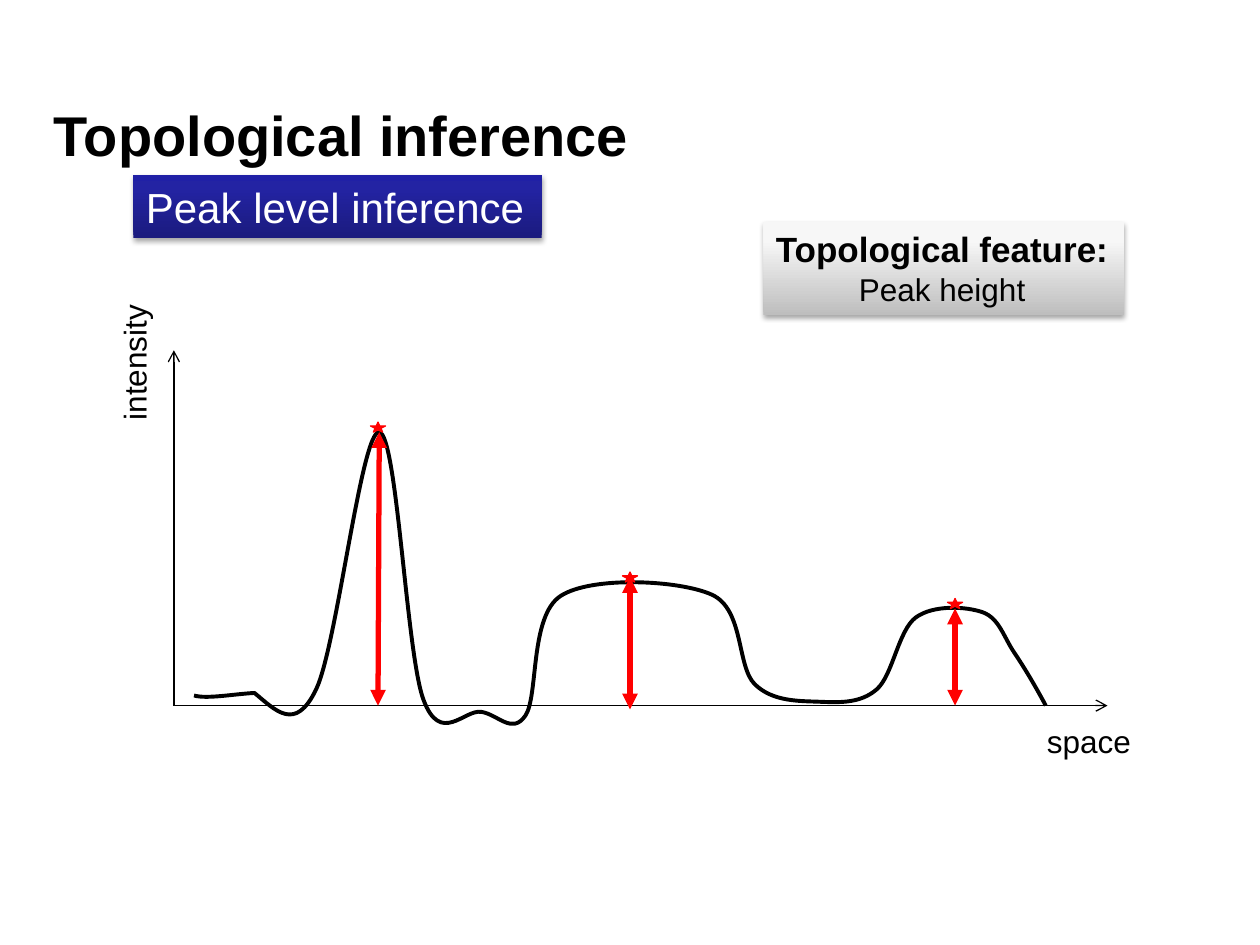
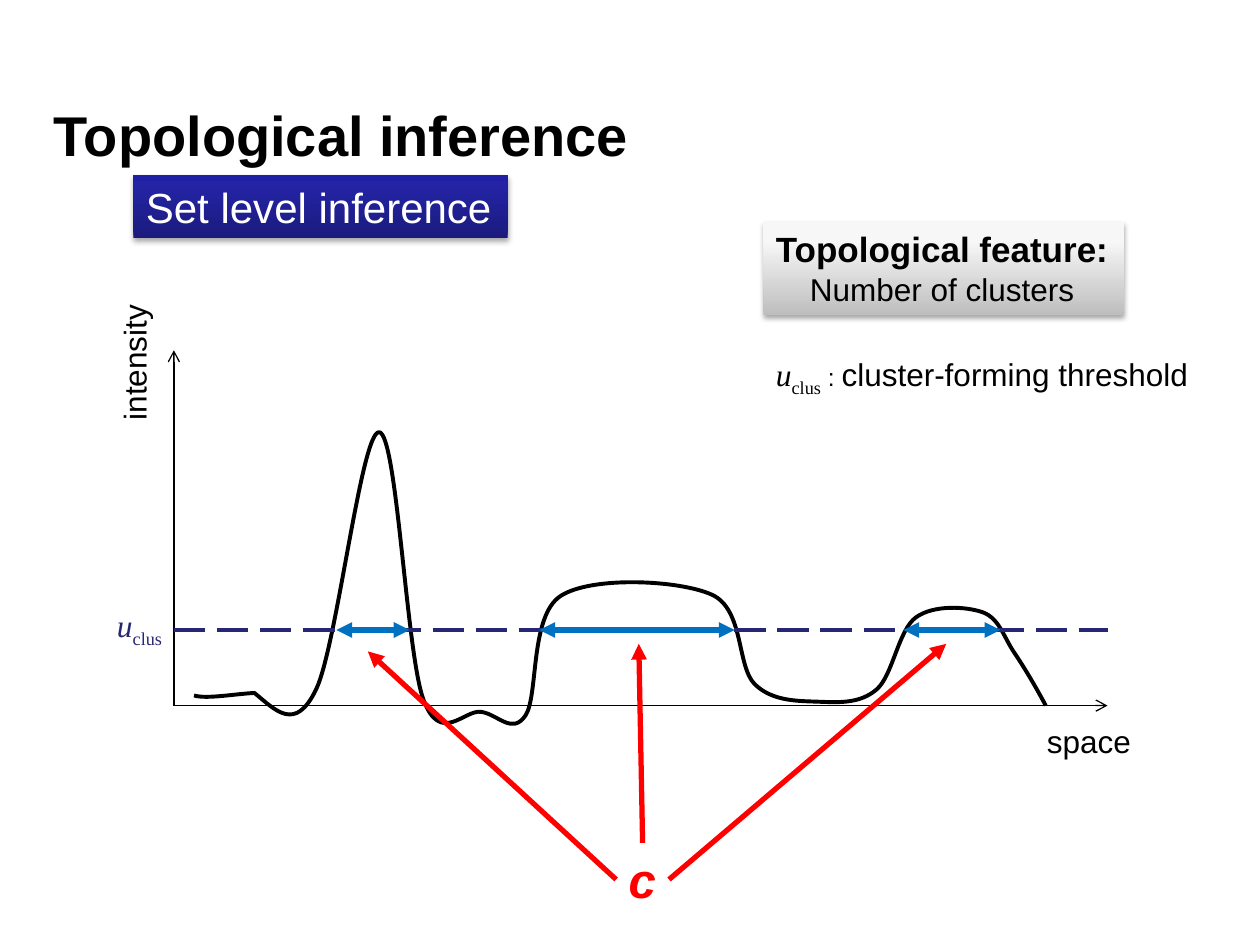
from copy import deepcopy
from dataclasses import dataclass
from typing import Any

from lxml.etree import SubElement
from pptx import Presentation
from pptx.dml.color import RGBColor
from pptx.enum.dml import MSO_LINE
from pptx.enum.shapes import MSO_CONNECTOR, MSO_SHAPE
from pptx.enum.text import MSO_ANCHOR, MSO_AUTO_SIZE, PP_ALIGN
from pptx.oxml.ns import qn
from pptx.util import Inches, Pt

BLACK, WHITE, RED = "000000", "FFFFFF", "FF0000"
NAVY, BLUE = "262673", "0070C0"
BANNER_SHADES = ("1B1B7E", "2323A3", "2020A6")
FEATURE_SHADES = ("BEBEBE", "F7F7F7", "F8F8F8")
SANS, SERIF = "Arial", "Times New Roman"

THRESHOLD = 0.6
AXIS_WIDTH, AXIS_HEIGHT = 7.41, 2.82
SIGNAL_HEIGHT = 2.31
BASELINE_START = [(0.04, 0.28), (0.16, 0.08), (0.64, 0.10), (1.13, 0.13)]
SIGNAL = [
    (0.11, 0.97), (0.64, 0.10), (1.13, 0.13), (1.63, 2.17), (1.98, 0.05),
    (2.44, -0.05), (2.79, -0.08), (3.07, 0.87), (4.27, 0.88), (4.61, 0.17),
    (5.13, 0.03), (5.58, 0.13), (5.89, 0.70), (6.42, 0.74), (6.67, 0.42),
    (6.92, 0), (7.15, -0.48),
]
PEAK_ARROWS = [
    ((1.63, 2.17), (1.62, 0)),
    ((3.62, 1.02), (3.62, -0.03)),
    ((6.2, 0.77), (6.2, 0)),
]
PEAK_STARS = [(1.62, 2.21), (3.62, 1.02), (6.2, 0.81)]
CLUSTERS = [(1.29, 1.87), (2.9, 4.45), (5.79, 6.56)]
COUNT_ARROWS = [
    ((3.72, -1.09), (3.69, 0.49)),
    ((3.51, -1.38), (1.54, 0.43)),
    ((3.93, -1.38), (6.13, 0.49)),
]


@dataclass
class Plot:
    """A shape collection and the place of the plot origin, with y going up."""
    shapes: Any
    left: float = 1.38
    base: float = 5.6

    def place(self, x, y):
        """Turn a plot point into slide inches."""
        return self.left + x, self.base - y


def rgb(value):
    """Turn a hex string into a colour."""
    return RGBColor.from_string(value)


def style(font, size, color, name=SANS, bold=False, italic=False):
    """Set all the features of a font."""
    font.size, font.name = Pt(size), name
    font.bold, font.italic = bold, italic
    font.color.rgb = rgb(color)


def add_text(shapes, at, text, size, color=BLACK, wrap=False, **look):
    """Add a text box with one styled paragraph."""
    box = shapes.add_textbox(*map(Inches, at))
    frame = box.text_frame
    frame.word_wrap = wrap
    frame.auto_size = MSO_AUTO_SIZE.NONE if wrap else MSO_AUTO_SIZE.SHAPE_TO_FIT_TEXT
    para = frame.paragraphs[0]
    para.text = text
    style(para.font, size, color, **look)
    return box


def add_panel(shapes, at, shades):
    """Add a shadowed rectangle shaded from bottom to top."""
    panel = shapes.add_shape(MSO_SHAPE.RECTANGLE, *map(Inches, at))
    panel.line.fill.background()
    panel.fill.gradient()
    panel.fill.gradient_angle = 90
    stops = panel._element.spPr.find(".//" + qn("a:gsLst"))
    stops.append(deepcopy(stops[-1]))
    for stop, position, shade in zip(panel.fill.gradient_stops, (0, 0.8, 1), shades):
        stop.position = position
        stop.color.rgb = rgb(shade)
    panel.shadow.inherit = False
    effects = panel._element.spPr.find(qn("a:effectLst"))
    shadow = SubElement(effects, qn("a:outerShdw"), blurRad=str(Pt(3.1)),
                        dist=str(Pt(1.8)), dir="5400000", rotWithShape="0")
    tint = SubElement(shadow, qn("a:srgbClr"), val=BLACK)
    SubElement(tint, qn("a:alpha"), val="35000")
    panel.text_frame.vertical_anchor = MSO_ANCHOR.TOP
    return panel


def add_line(plot, start, end, color, width, head=None, tail=None, dash=None):
    """Connect two plot points, with optional arrowheads."""
    ends = [Inches(length) for point in (start, end) for length in plot.place(*point)]
    line = plot.shapes.add_connector(MSO_CONNECTOR.STRAIGHT, *ends)
    line.line.color.rgb = rgb(color)
    line.line.width = Pt(width)
    if dash:
        line.line.dash_style = dash
    outline = line.line._get_or_add_ln()
    for tag, kind in (("a:headEnd", head), ("a:tailEnd", tail)):
        if kind:
            SubElement(outline, qn(tag), type=kind)
    SubElement(line._element.spPr, qn("a:effectLst"))


def bezier_segments(knots):
    """Give two controls and an end for each stretch between the outer guides."""
    return [
        (tuple(q + (r - p) / 6 for p, q, r in zip(a, b, c)),
         tuple(r - (s - q) / 6 for q, r, s in zip(b, c, d)), c)
        for a, b, c, d in zip(knots, knots[1:], knots[2:], knots[3:])
    ]


def draw_signal(plot):
    """Draw the intensity curve with one Bézier stretch between knots."""
    segments = [
        [tuple(map(Inches, plot.place(*point))) for point in segment]
        for segment in bezier_segments(BASELINE_START) + bezier_segments(SIGNAL)
    ]
    start = map(Inches, plot.place(*BASELINE_START[1]))
    builder = plot.shapes.build_freeform(*start)
    builder.add_line_segments([segment[-1] for segment in segments], close=False)
    curve = builder.convert_to_shape()
    outline = curve._element.spPr.find(".//" + qn("a:path"))
    for straight, segment in zip(outline.findall(qn("a:lnTo")), segments):
        outline.remove(straight)
        bend = SubElement(outline, qn("a:cubicBezTo"))
        for x, y in segment:
            SubElement(bend, qn("a:pt"), x=str(x - curve.left), y=str(y - curve.top))
    curve.height = Inches(SIGNAL_HEIGHT)
    outline.set("h", str(curve.height))
    curve.fill.background()
    curve.line.color.rgb = rgb(BLACK)
    curve.line.width = Pt(2.25)
    curve.shadow.inherit = False


def draw_plot(plot):
    """Draw the curve, the two axes and their labels."""
    draw_signal(plot)
    for end in ((AXIS_WIDTH, 0), (0, AXIS_HEIGHT)):
        add_line(plot, (0, 0), end, BLACK, 0.75, tail="arrow")
    add_text(plot.shapes, (*plot.place(6.83, -0.08), 0.88, 0.4), "space", 18)
    label = add_text(plot.shapes, (*plot.place(-0.88, 2.93), 1.13, 0.4), "intensity", 18)
    label.rotation = 270


def draw_heading(shapes, level, width):
    """Add the slide title and the banner with the level of inference."""
    title = add_text(shapes, (0.33, 0.63, 9, 0.87), "Topological inference", 32,
                     wrap=True, bold=True)
    title.text_frame.vertical_anchor = MSO_ANCHOR.MIDDLE
    banner = add_panel(shapes, (1.06, 1.39, width, 0.5), BANNER_SHADES)
    para = banner.text_frame.paragraphs[0]
    para.text = level
    para.alignment = PP_ALIGN.LEFT
    style(para.font, 24, WHITE)


def draw_feature(shapes, feature):
    """Add the grey panel that names the topological feature."""
    panel = add_panel(shapes, (6.06, 1.76, 2.86, 0.74), FEATURE_SHADES)
    frame = panel.text_frame
    frame.word_wrap = False
    frame.auto_size = MSO_AUTO_SIZE.SHAPE_TO_FIT_TEXT
    heading, detail = frame.paragraphs[0], frame.add_paragraph()
    heading.text, detail.text = "Topological feature:", feature
    heading.alignment, detail.alignment = PP_ALIGN.LEFT, PP_ALIGN.CENTER
    style(heading.font, 20, BLACK, bold=True)
    style(detail.font, 18, BLACK)


def add_threshold_symbol(shapes, at, color):
    """Write the threshold symbol with its subscript and return the paragraph."""
    box = add_text(shapes, at, "u", 18, color, name=SERIF)
    para = box.text_frame.paragraphs[0]
    para.runs[0].font.italic = True
    subscript = para.add_run()
    subscript.text = "clus"
    subscript._r.get_or_add_rPr().set("baseline", "-25000")
    return para


def draw_peaks(plot):
    """Mark the peaks with stars and their heights with arrows."""
    for top, foot in PEAK_ARROWS:
        add_line(plot, top, foot, RED, 3, "triangle", "triangle")
    width, height = 0.12, 0.08
    for x, y in PEAK_STARS:
        corner = plot.place(x - width / 2, y + height / 2)
        star = plot.shapes.add_shape(
            MSO_SHAPE.STAR_5_POINT, *map(Inches, (*corner, width, height)))
        star.fill.solid()
        star.fill.fore_color.rgb = star.line.color.rgb = rgb(RED)
        star.line.width = Pt(0.75)
        star.shadow.inherit = False


def draw_clusters(plot):
    """Draw the threshold, the clusters above it and their count."""
    shapes = plot.shapes
    add_line(plot, (0, THRESHOLD), (AXIS_WIDTH, THRESHOLD), NAVY, 2.25,
             dash=MSO_LINE.LONG_DASH)
    add_threshold_symbol(shapes, (*plot.place(-0.55, 0.84), 0.6, 0.4), NAVY)
    for start, end in CLUSTERS:
        add_line(plot, (start, THRESHOLD), (end, THRESHOLD), BLUE, 3,
                 "triangle", "triangle")
    legend = add_threshold_symbol(shapes, (6.06, 2.77, 3.54, 0.4), BLACK)
    for text, size in ((" : ", 14), ("cluster-forming threshold", 18)):
        span = legend.add_run()
        span.text = text
        span.font.name, span.font.size = SANS, Pt(size)
    for start, end in COUNT_ARROWS:
        add_line(plot, start, end, RED, 3, tail="triangle")
    add_text(shapes, (*plot.place(3.51, -1.09), 0.42, 0.57), "c", 28, RED,
             bold=True, italic=True)


def build_slide(deck, level, banner_width, feature, draw_marks):
    """Build one slide about a level of inference."""
    shapes = deck.slides.add_slide(deck.slide_layouts[6]).shapes
    draw_feature(shapes, feature)
    draw_plot(Plot(shapes.add_group_shape().shapes))
    draw_marks(Plot(shapes))
    draw_heading(shapes, level, banner_width)


def main():
    """Build and save the deck."""
    deck = Presentation()
    deck.slide_width, deck.slide_height = Inches(10), Inches(7.5)
    build_slide(deck, "Peak level inference", 3.24, "Peak height", draw_peaks)
    build_slide(deck, "Set level inference", 2.97, "Number of clusters", draw_clusters)
    deck.save("out.pptx")


if __name__ == "__main__":
    main()
